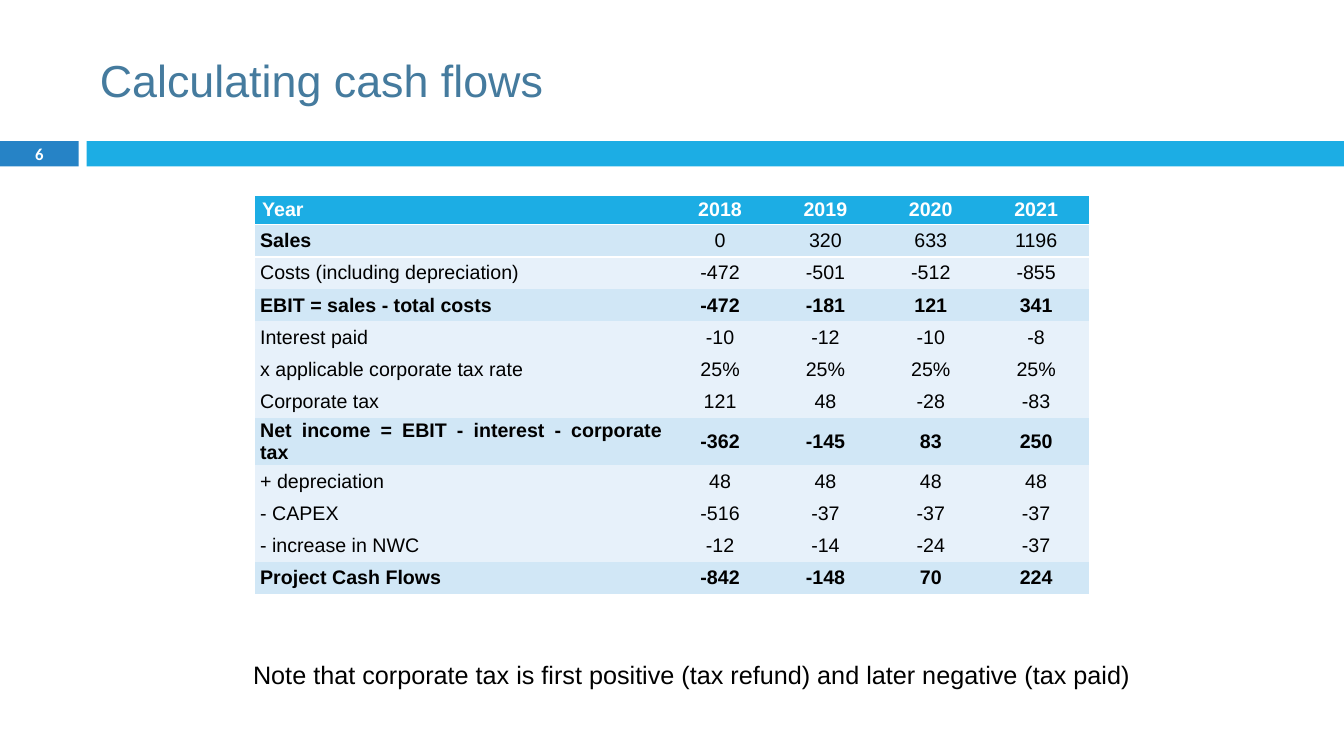
import pptx
import pptx.util
import pptx.dml.color
import pptx.enum.shapes
import pptx.enum.text
import pptx.oxml
import pptx.oxml.ns
from dataclasses import dataclass

Inches = pptx.util.Inches
Pt = pptx.util.Pt
ALIGN = pptx.enum.text.PP_ALIGN
MIDDLE = pptx.enum.text.MSO_ANCHOR.MIDDLE
PLAIN = "{2D5ABB26-0587-4C30-8999-92F81FD0307C}"


@dataclass(frozen=True)
class Theme:
    title: str = "457B9E"
    badge: str = "2683C6"
    accent: str = "1CADE4"
    strong: str = "D1E7F6"
    soft: str = "E7F1FA"
    white: str = "FFFFFF"
    black: str = "000000"
    face: str = "Arial"
    digit: str = "Calibri"
    big: float = 32
    note: float = 18
    cell: float = 14
    small: float = 11.9


THEME = Theme()
YEARS = ("Year", "2018", "2019", "2020", "2021")
ROWS = (
    ("Sales", "0", "320", "633", "1196"),
    ("Costs (including depreciation)", "-472", "-501", "-512", "-855"),
    ("EBIT = sales - total costs", "-472", "-181", "121", "341"),
    ("Interest paid", "-10", "-12", "-10", "-8"),
    ("x applicable corporate tax rate", "25%", "25%", "25%", "25%"),
    ("Corporate tax", "121", "48", "-28", "-83"),
    ("Net income = EBIT - interest - corporate tax", "-362", "-145", "83", "250"),
    ("+ depreciation", "48", "48", "48", "48"),
    ("- CAPEX", "-516", "-37", "-37", "-37"),
    ("- increase in NWC", "-12", "-14", "-24", "-37"),
    ("Project Cash Flows", "-842", "-148", "70", "224"),
)
TOTALS = (3, 7, 11)


def paint(fill, color):
    fill.solid()
    fill.fore_color.rgb = pptx.dml.color.RGBColor.from_string(color)


def style(para, size, color, bold=False, face=THEME.face, align=ALIGN.LEFT):
    para.alignment = align
    para.font.size = Pt(size)
    para.font.name = face
    para.font.bold = bold
    para.font.color.rgb = pptx.dml.color.RGBColor.from_string(color)


def place(shape, box):
    shape.left, shape.top, shape.width, shape.height = map(Inches, box)


def add_title(slide, box, text):
    title = slide.shapes.title
    place(title, box)
    frame = title.text_frame
    frame.text = text
    frame.vertical_anchor = MIDDLE
    style(frame.paragraphs[0], THEME.big, THEME.title)


def add_band(slide, box, number):
    left, top, width, height = box
    badge, start = 0.78, 0.86
    parts = ((left, badge, THEME.badge), (left + start, width - start, THEME.accent))
    for x, wide, color in parts:
        bar = slide.shapes.add_shape(
            pptx.enum.shapes.MSO_SHAPE.RECTANGLE,
            Inches(x), Inches(top), Inches(wide), Inches(height))
        bar.shadow.inherit = False
        bar.line.fill.background()
        paint(bar.fill, color)
    label = slide.shapes.add_textbox(
        Inches(left), Inches(top - 0.01), Inches(badge), Inches(height + 0.02))
    frame = label.text_frame
    frame.word_wrap = True
    frame.margin_top = frame.margin_bottom = 0
    frame.vertical_anchor = MIDDLE
    frame.text = number
    style(frame.paragraphs[0], THEME.small, THEME.white, True, THEME.digit, ALIGN.CENTER)


def add_edge(cell, sides):
    for spot, side in enumerate(sides):
        edge = pptx.oxml.parse_xml(
            f'<a:{side} {pptx.oxml.ns.nsdecls("a")} w="12700"><a:solidFill>'
            f'<a:srgbClr val="{THEME.white}"/></a:solidFill></a:{side}>')
        cell._tc.get_or_add_tcPr().insert(spot, edge)


def add_cell(cell, text, row, col):
    head = row == 0
    total = row in TOTALS
    bold = head or total or (row == 1 and col == 0)
    back = THEME.accent if head else THEME.strong if total or row == 1 else THEME.soft
    paint(cell.fill, back)
    cell.vertical_anchor = MIDDLE
    cell.margin_left = cell.margin_right = Inches(0.07 if head else 0.05)
    cell.margin_top = cell.margin_bottom = 0
    cell.text = text
    para = cell.text_frame.paragraphs[0]
    para.space_before = para.space_after = Pt(2)
    first = ALIGN.LEFT if head else ALIGN.JUSTIFY
    style(para, THEME.cell, THEME.white if head else THEME.black, bold,
          align=ALIGN.CENTER if col else first)
    if head:
        add_edge(cell, ("lnT", "lnB"))
    elif row == 1:
        add_edge(cell, ("lnT",))


def add_flows(slide, box):
    data = (YEARS,) + ROWS
    frame = slide.shapes.add_table(len(data), len(YEARS), *map(Inches, box))
    table = frame.table
    table._tbl.tblPr.find(pptx.oxml.ns.qn("a:tableStyleId")).text = PLAIN
    table.horz_banding = False
    first = 4.09
    for col, column in enumerate(table.columns):
        rest = (box[2] - first) / (len(YEARS) - 1)
        column.width = Inches(rest if col else first)
    for row, line in enumerate(data):
        table.rows[row].height = Inches(0.32 if row else 0.29)
        for col, text in enumerate(line):
            add_cell(table.cell(row, col), text, row, col)


def add_note(slide, box, text):
    body = slide.placeholders[1]
    place(body, box)
    frame = body.text_frame
    frame.text = text
    para = frame.paragraphs[0]
    para.line_spacing = 1.5
    para.space_before = Pt(7)
    style(para, THEME.note, THEME.black)
    props = para._p.get_or_add_pPr()
    props.set("marL", "0")
    props.set("indent", "0")
    props.append(pptx.oxml.parse_xml(f'<a:buNone {pptx.oxml.ns.nsdecls("a")}/>'))


def main():
    deck = pptx.Presentation()
    deck.slide_width, deck.slide_height = Inches(13.33), Inches(7.5)
    slide = deck.slides.add_slide(deck.slide_layouts[1])
    add_band(slide, (0, 1.4, 13.33, 0.25), "6")
    add_title(slide, (0.89, 0.25, 11.89, 1.08), "Calculating cash flows")
    add_flows(slide, (2.53, 1.94, 8.27, 3.83))
    add_note(slide, (2.41, 6.34, 9.29, 0.78),
             "Note that corporate tax is first positive (tax refund) "
             "and later negative (tax paid)")
    deck.save("out.pptx")


if __name__ == "__main__":
    main()
